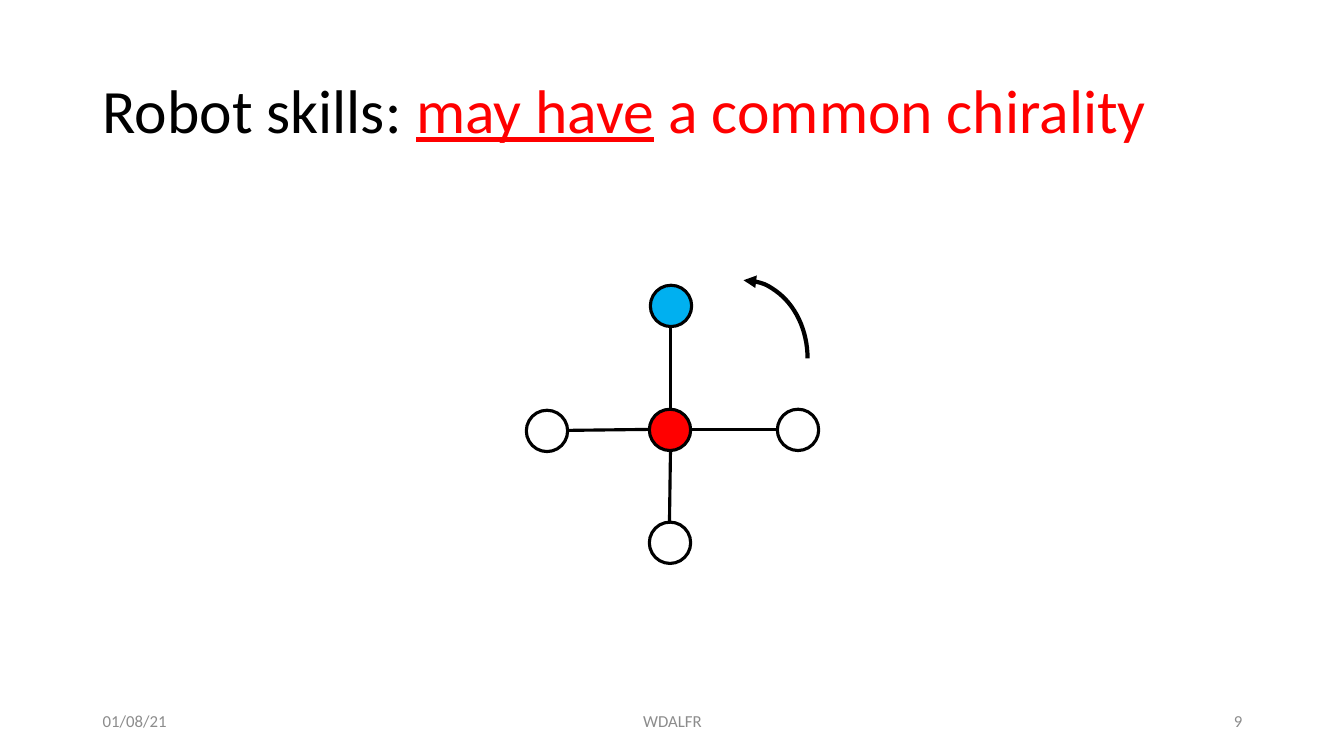
"""Build the slide on robots sharing a common chirality."""
from lxml.etree import SubElement
from pptx import Presentation
from pptx.dml.color import RGBColor
from pptx.enum.shapes import MSO_CONNECTOR, MSO_SHAPE
from pptx.enum.text import MSO_ANCHOR, PP_ALIGN
from pptx.oxml.ns import qn
from pptx.util import Inches, Pt


def paint(color, code):
    color.rgb = RGBColor.from_string(code)


def write(box, runs, size, align):
    label = slide.shapes.add_textbox(*map(Inches, box))
    frame = label.text_frame
    frame.word_wrap = True
    frame.vertical_anchor = MSO_ANCHOR.MIDDLE
    para = frame.paragraphs[0]
    para.alignment = align
    para.font.name = "Calibri"
    para.font.size = Pt(size)
    for text, code, under in runs:
        run = para.add_run()
        run.text = text
        paint(run.font.color, code)
        if under:
            run.font.underline = True
    return para


deck = Presentation()
deck.slide_width, deck.slide_height = Inches(13.33), Inches(7.5)
slide = deck.slides.add_slide(deck.slide_layouts[6])

title = write((0.92, 0.4, 11.5, 1.45), [
    ("Robot skills: ", "000000", False),
    ("may have", "FF0000", True),
    (" a common chirality", "FF0000", False),
], 44, PP_ALIGN.LEFT)
title.line_spacing = 0.9

for left, width, text, align in [
    (0.92, 3, "01/08/21", PP_ALIGN.LEFT),
    (4.42, 4.5, "WDALFR", PP_ALIGN.CENTER),
    (9.42, 3, "9", PP_ALIGN.RIGHT),
]:
    write((left, 6.95, width, 0.4), [(text, "8C8C8C", False)], 12, align)

size = 0.41
for left, top, code in [
    (6.45, 2.83, "00B0F0"),
    (5.22, 4.07, "FFFFFF"),
    (6.44, 4.06, "FF0000"),
    (7.71, 4.06, "FFFFFF"),
    (6.44, 5.18, "FFFFFF"),
]:
    node = slide.shapes.add_shape(
        MSO_SHAPE.OVAL, *map(Inches, (left, top, size, size)))
    node.shadow.inherit = False
    node.fill.solid()
    paint(node.fill.fore_color, code)
    paint(node.line.color, "000000")
    node.line.width = Pt(2.25)

for ends in [
    (6.85, 4.26, 7.71, 4.26),
    (5.63, 4.27, 6.44, 4.26),
    (6.65, 4.47, 6.64, 5.18),
    (6.65, 3.24, 6.65, 4.06),
]:
    edge = slide.shapes.add_connector(
        MSO_CONNECTOR.STRAIGHT, *map(Inches, ends))
    paint(edge.line.color, "000000")
    edge.line.width = Pt(2.25)
    SubElement(edge._element.spPr, qn("a:effectLst"))

turn = slide.shapes.add_shape(
    MSO_SHAPE.ARC, *map(Inches, (6.74, 2.78, 1.27, 1.55)))
turn.shadow.inherit = False
turn.fill.background()
paint(turn.line.color, "000000")
turn.line.width = Pt(3)
SubElement(turn.line._get_or_add_ln(), qn("a:headEnd"), type="triangle")

deck.save("out.pptx")
